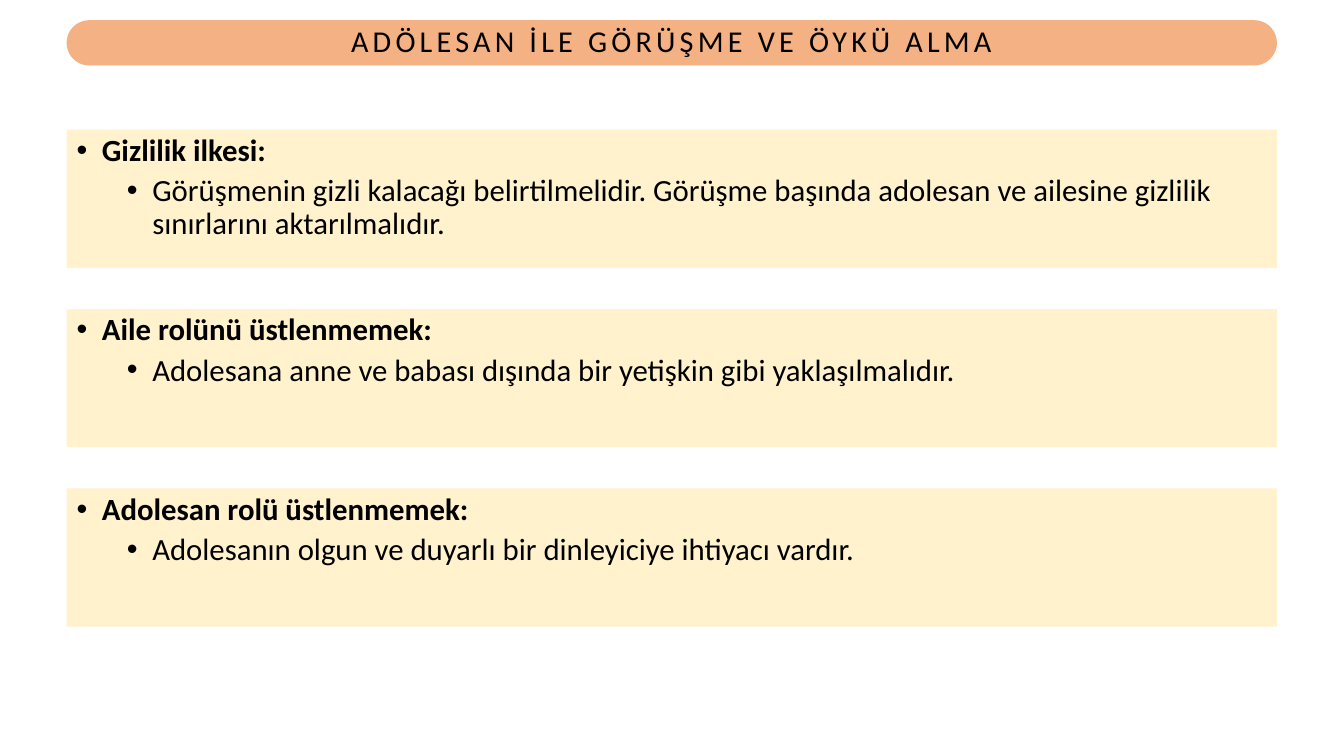
from lxml.etree import SubElement
from pptx import Presentation
from pptx.dml.color import RGBColor
from pptx.enum.shapes import MSO_SHAPE
from pptx.enum.text import MSO_ANCHOR, PP_ALIGN
from pptx.oxml.ns import qn
from pptx.util import Cm, Pt

TITLE = "ADÖLESAN İLE GÖRÜŞME VE ÖYKÜ ALMA"
PRINCIPLES = [
    ("Gizlilik ilkesi:",
     "Görüşmenin gizli kalacağı belirtilmelidir. Görüşme başında adolesan ve "
     "ailesine gizlilik sınırlarını aktarılmalıdır."),
    ("Aile rolünü üstlenmemek:",
     "Adolesana anne ve babası dışında bir yetişkin gibi yaklaşılmalıdır."),
    ("Adolesan rolü üstlenmemek:",
     "Adolesanın olgun ve duyarlı bir dinleyiciye ihtiyacı vardır."),
]
FONT, TEXT, BANNER, PANEL = "Calibri", "000000", "F4B183", "FFF2CC"
LEFT, WIDTH = 1.68, 30.5
TITLE_TOP, TITLE_HEIGHT = 0.51, 1.14
PANEL_TOP, PANEL_HEIGHT, PANEL_STEP = 3.27, 3.48, 4.52


def color(value):
    return RGBColor.from_string(value)


def add_box(s, kind, top, height, fill, anchor):
    sp = s.shapes.add_shape(kind, Cm(LEFT), Cm(top), Cm(WIDTH), Cm(height))
    sp.shadow.inherit = False
    sp.fill.solid()
    sp.fill.fore_color.rgb = color(fill)
    sp.line.fill.background()
    tf = sp.text_frame
    tf.word_wrap = True
    tf.vertical_anchor = anchor
    tf.margin_left = tf.margin_right = Cm(0.25)
    tf.margin_top = tf.margin_bottom = Cm(0.13)
    return sp


def write(p, text, size=22, bold=False, align=PP_ALIGN.LEFT, before=0,
          level=0, bullet=False, spacing=None):
    p.alignment = align
    p.line_spacing = 0.9
    p.space_before = Pt(before)
    p.level = level
    if bullet:
        pPr = p._p.get_or_add_pPr()
        pPr.set("marL", str(Cm(0.64 + 1.27 * level)))
        pPr.set("indent", str(Cm(-0.64)))
        SubElement(pPr, qn("a:buFont")).set("typeface", "Arial")
        SubElement(pPr, qn("a:buChar")).set("char", "•")
    r = p.add_run()
    r.text = text
    r.font.name = FONT
    r.font.size = Pt(size)
    r.font.bold = bold
    r.font.color.rgb = color(TEXT)
    if spacing:
        r.font._element.set("spc", str(spacing * 100))


prs = Presentation()
prs.slide_width, prs.slide_height = Cm(33.87), Cm(19.05)
s = prs.slides.add_slide(prs.slide_layouts[6])

banner = add_box(s, MSO_SHAPE.ROUNDED_RECTANGLE, TITLE_TOP, TITLE_HEIGHT,
                 BANNER, MSO_ANCHOR.MIDDLE)
banner.adjustments[0] = 0.5
banner.text_frame.margin_top = banner.text_frame.margin_bottom = 0
write(banner.text_frame.paragraphs[0], TITLE, size=21.6,
      align=PP_ALIGN.CENTER, spacing=3)

for i, (heading, detail) in enumerate(PRINCIPLES):
    panel = add_box(s, MSO_SHAPE.RECTANGLE, PANEL_TOP + i * PANEL_STEP,
                    PANEL_HEIGHT, PANEL, MSO_ANCHOR.TOP)
    tf = panel.text_frame
    write(tf.paragraphs[0], heading, bold=True, bullet=True)
    write(tf.add_paragraph(), detail, before=5, level=1, bullet=True)

prs.save("out.pptx")
